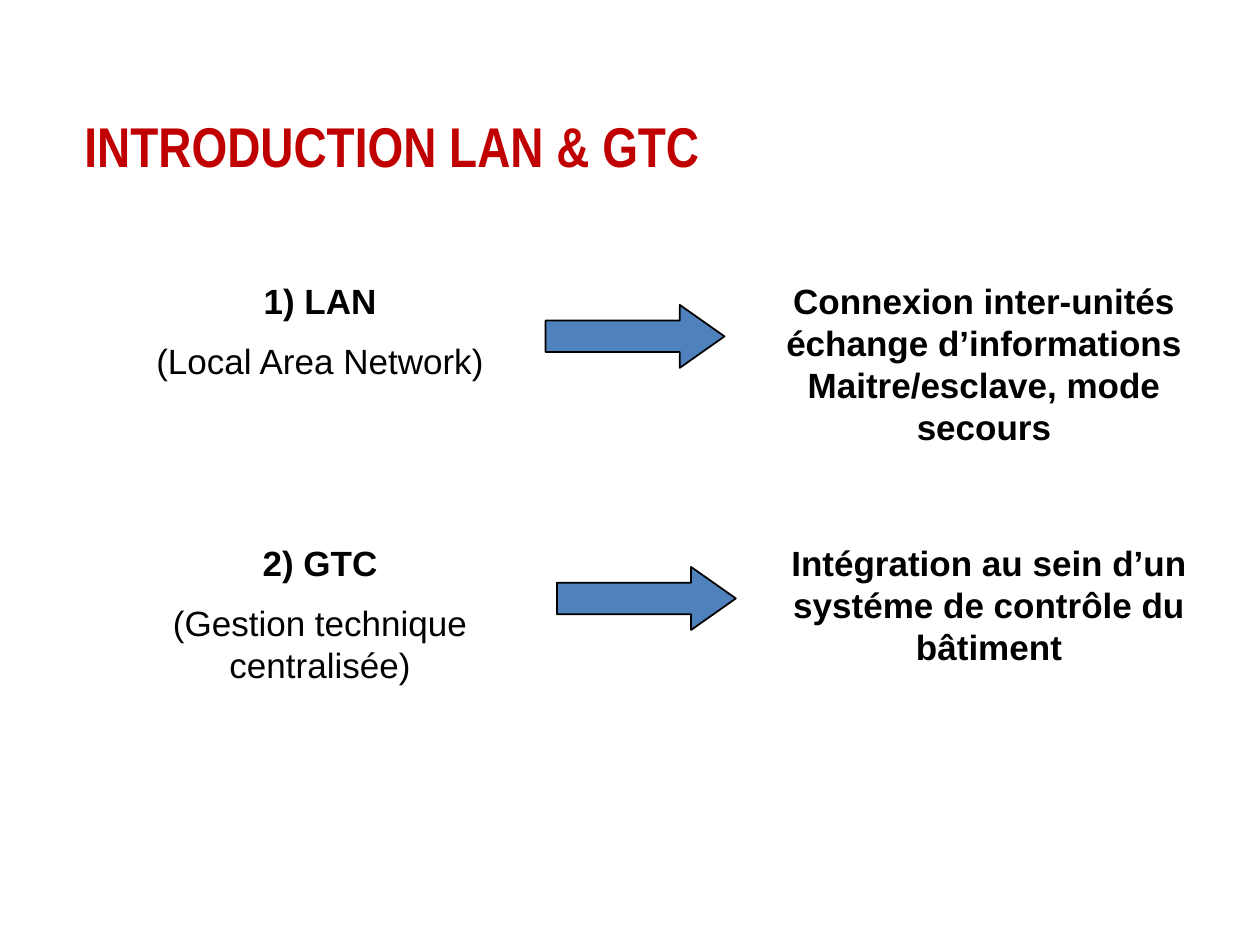
from dataclasses import dataclass

from pptx import Presentation
from pptx.dml.color import RGBColor
from pptx.enum.shapes import MSO_SHAPE as Shape
from pptx.enum.text import MSO_ANCHOR as Anchor, MSO_AUTO_SIZE as AutoSize, PP_ALIGN as Align
from pptx.util import Inches, Pt


@dataclass(frozen=True)
class Theme:
    title_font: str = "Arial Narrow"
    body_font: str = "Arial"
    title_size: int = 32
    body_size: int = 20
    para_gap: int = 10
    title_color: str = "C00000"
    text_color: str = "000000"
    arrow_fill: str = "4F81BD"
    arrow_line: str = "000000"


class SlideBuilder:
    def __init__(self, slide, theme):
        self.slide = slide
        self.theme = theme

    def add_run(self, p, text, font, size, color, bold):
        r = p.add_run()
        r.text = text
        r.font.name = font
        r.font.size = Pt(size)
        r.font.bold = bold
        r.font.color.rgb = RGBColor.from_string(color)

    def title(self, text, left, top, width, height):
        t = self.theme
        sp = self.slide.shapes.title
        sp.left, sp.top = Inches(left), Inches(top)
        sp.width, sp.height = Inches(width), Inches(height)
        tf = sp.text_frame
        tf.margin_left = tf.margin_right = tf.margin_top = tf.margin_bottom = 0
        tf.vertical_anchor = Anchor.BOTTOM
        tf.auto_size = AutoSize.NONE
        p = tf.paragraphs[0]
        p.alignment = Align.LEFT
        self.add_run(p, text, t.title_font, t.title_size, t.title_color, True)

    def text(self, lines, left, top, width, height):
        """Centred text box; the first line is bold, the others regular."""
        t = self.theme
        sp = self.slide.shapes.add_textbox(
            Inches(left), Inches(top), Inches(width), Inches(height))
        tf = sp.text_frame
        tf.word_wrap = True
        for i, line in enumerate(lines):
            p = tf.add_paragraph() if i else tf.paragraphs[0]
            p.alignment = Align.CENTER
            p.space_before = Pt(t.para_gap if i else 0)
            self.add_run(p, line, t.body_font, t.body_size, t.text_color, i == 0)

    def arrow(self, left, top, width, height):
        t = self.theme
        sp = self.slide.shapes.add_shape(
            Shape.RIGHT_ARROW, Inches(left), Inches(top), Inches(width), Inches(height))
        sp.adjustments[0], sp.adjustments[1] = 0.5, 0.71
        sp.shadow.inherit = False
        sp.fill.solid()
        sp.fill.fore_color.rgb = RGBColor.from_string(t.arrow_fill)
        sp.line.color.rgb = RGBColor.from_string(t.arrow_line)
        sp.line.width = Pt(1)

    def topic(self, top, term, purpose, arrow_left, purpose_left, heights):
        """One row: term, arrow, purpose."""
        self.text(term, 0.75, top, 3.58, heights[0])
        self.arrow(arrow_left, top + 0.25, 1.42, 0.5)
        self.text([purpose], purpose_left, top, 3.54, heights[1])


def main():
    prs = Presentation()
    prs.slide_width, prs.slide_height = Inches(10), Inches(7.5)
    s = SlideBuilder(prs.slides.add_slide(prs.slide_layouts[5]), Theme())

    # Title
    s.title("INTRODUCTION LAN & GTC", 0.67, 0.47, 8.99, 0.95)

    # Local network
    s.topic(2.17, ["1) LAN", "(Local Area Network)"],
            "Connexion inter-unités échange d’informations Maitre/esclave, mode secours",
            4.33, 6.04, (0.93, 1.45))

    # Building management
    s.topic(4.25, ["2) GTC", "(Gestion technique centralisée)"],
            "Intégration au sein d’un systéme de contrôle du bâtiment",
            4.42, 6.08, (1.28, 1.11))

    prs.save("out.pptx")


if __name__ == "__main__":
    main()
